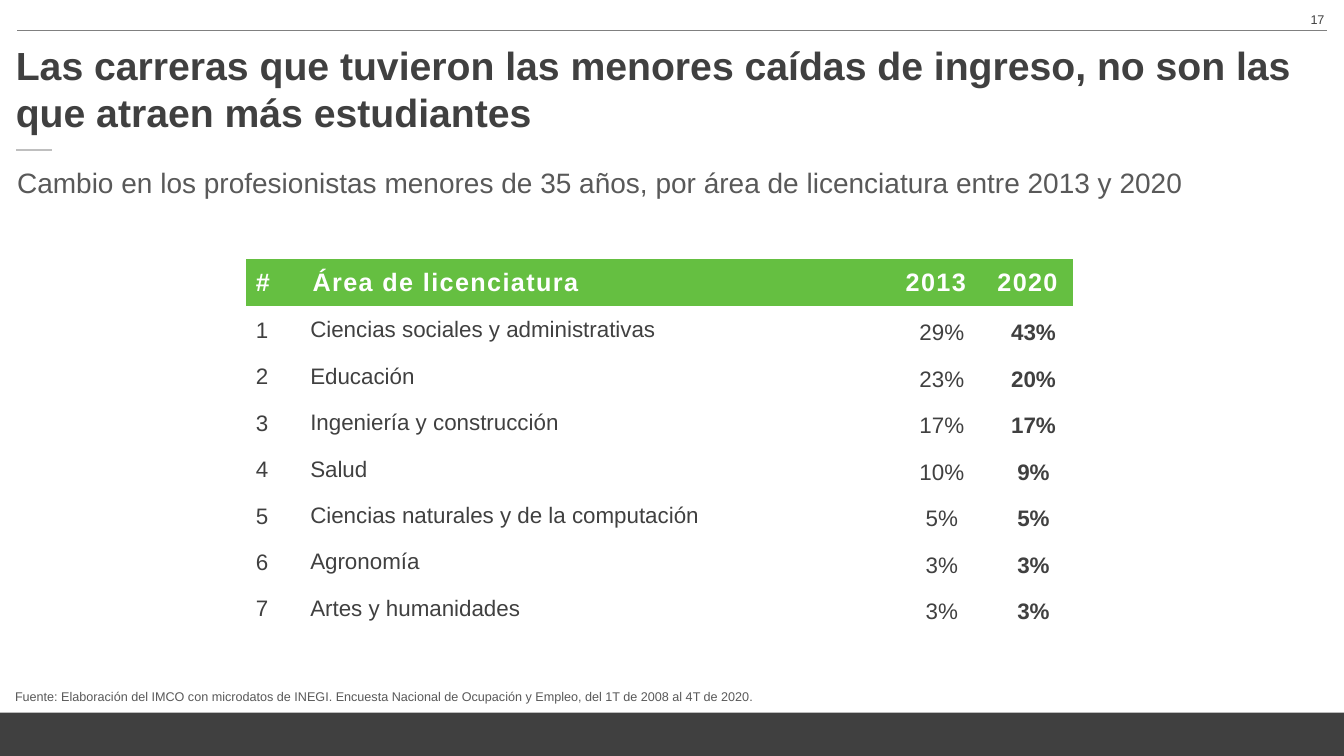
from lxml import etree
from pptx import Presentation
from pptx import util as u
from pptx.dml import color
from pptx.enum import shapes, text
from pptx.oxml import ns

COLORS = {"dark": "404040", "grey": "595959", "rule": "808080",
          "accent": "BFBFBF", "green": "65BF41", "white": "FFFFFF"}
LEFT, CENTER, RIGHT = text.PP_ALIGN.LEFT, text.PP_ALIGN.CENTER, text.PP_ALIGN.RIGHT
TOP, MIDDLE, BOTTOM = text.MSO_ANCHOR.TOP, text.MSO_ANCHOR.MIDDLE, text.MSO_ANCHOR.BOTTOM
PLAIN_STYLE = "{2D5ABB26-0587-4C30-8999-92F81FD0307C}"


def rgb(name):
    return color.RGBColor.from_string(COLORS[name])


def assign(target, values):
    for key, value in values.items():
        setattr(target, key, value)


class Deck:
    font_name = "Arial"

    def __init__(self, width, height):
        self.prs = Presentation()
        assign(self.prs, {"slide_width": u.Cm(width), "slide_height": u.Cm(height)})
        self.slide = self.prs.slides.add_slide(self.prs.slide_layouts[6])

    def fill_paragraph(self, paragraph, content, size, tone, bold=False, align=LEFT,
                       indent=0, hanging=0, leading=None, tracking=0):
        run = paragraph.add_run()
        run.text = content
        assign(run.font, {"name": self.font_name, "size": u.Pt(size), "bold": bold})
        run.font.color.rgb = rgb(tone)
        if tracking:
            run.font._element.set("spc", str(tracking * 100))
        assign(paragraph, {"alignment": align, "line_spacing": leading})
        properties = paragraph._p.get_or_add_pPr()
        properties.set("marL", str(u.Cm(indent)))
        properties.set("indent", str(-u.Cm(hanging)))

    def label(self, box, content, size, tone, anchor=TOP, **style):
        frame = self.slide.shapes.add_textbox(*map(u.Cm, box)).text_frame
        assign(frame, {"word_wrap": True, "vertical_anchor": anchor,
                       "auto_size": text.MSO_AUTO_SIZE.NONE})
        self.fill_paragraph(frame.paragraphs[0], content, size, tone, **style)

    def band(self, box, tone):
        band = self.slide.shapes.add_shape(shapes.MSO_SHAPE.RECTANGLE, *map(u.Cm, box))
        band.shadow.inherit = False
        band.fill.solid()
        band.fill.fore_color.rgb = rgb(tone)
        band.line.fill.background()

    def rule(self, left, right, y, tone, weight):
        rule = self.slide.shapes.add_connector(
            shapes.MSO_CONNECTOR.STRAIGHT, *map(u.Cm, (left, y, right, y)))
        rule.line.color.rgb = rgb(tone)
        rule.line.width = u.Pt(weight)
        etree.SubElement(rule._element.spPr, ns.qn("a:effectLst"))

    def cell(self, cell, content, margins, fill=None, **style):
        sides = ("margin_left", "margin_top", "margin_right", "margin_bottom")
        assign(cell, dict(zip(sides, map(u.Cm, margins)), vertical_anchor=MIDDLE))
        if fill:
            cell.fill.solid()
            cell.fill.fore_color.rgb = rgb(fill)
        else:
            cell.fill.background()
        self.fill_paragraph(cell.text_frame.paragraphs[0], content, **style)

    def table(self, left, top, widths, heights, rows, header_formats, body_formats):
        frame = self.slide.shapes.add_table(
            len(rows), len(widths),
            *map(u.Cm, (left, top, sum(widths), sum(heights))))
        grid = frame.table
        assign(grid, {"first_row": False, "horz_banding": False})
        grid._tbl.tblPr.find(ns.qn("a:tableStyleId")).text = PLAIN_STYLE
        for column, width in zip(grid.columns, widths):
            column.width = u.Cm(width)
        for r, (row, height) in enumerate(zip(rows, heights)):
            grid.rows[r].height = u.Cm(height)
            formats = body_formats if r else header_formats
            for c, (content, style) in enumerate(zip(row, formats)):
                self.cell(grid.cell(r, c), content, **style)


def main():
    deck = Deck(33.87, 19.05)
    deck.band((0, 17.96, 33.87, 1.09), "dark")
    deck.rule(0.43, 33.43, 0.77, "rule", 0.75)
    deck.label((26.01, 0.18, 7.62, 1.02), "17", 9, "dark", align=RIGHT)
    deck.label((0.15, 0.91, 33.48, 1.52),
               "Las carreras que tuvieron las menores caídas de ingreso, "
               "no son las que atraen más estudiantes", 28, "dark", bold=True)
    deck.label((0.13, 17.17, 32.99, 0.69),
               "Fuente: Elaboración del IMCO con microdatos de INEGI. Encuesta Nacional "
               "de Ocupación y Empleo, del 1T de 2008 al 4T de 2020.",
               9, "grey", anchor=BOTTOM, indent=0.03, hanging=0.03)
    deck.label((0.18, 4.04, 31.39, 1.96),
               "Cambio en los profesionistas menores de 35 años, "
               "por área de licenciatura entre 2013 y 2020", 20, "grey")
    deck.rule(0.41, 1.3, 3.78, "accent", 1.5)

    areas = [
        ("Ciencias sociales y administrativas", 29, 43),
        ("Educación", 23, 20),
        ("Ingeniería y construcción", 17, 17),
        ("Salud", 10, 9),
        ("Ciencias naturales y de la computación", 5, 5),
        ("Agronomía", 3, 3),
        ("Artes y humanidades", 3, 3),
    ]
    rows = [("#", "Área de licenciatura", "2013", "2020")]
    rows += [(str(rank), area, f"{before}%", f"{after}%")
             for rank, (area, before, after) in enumerate(areas, 1)]

    padded = (0.25, 0.13, 0.25, 0.13)
    heading = dict(size=18, tone="white", bold=True, tracking=1,
                   fill="green", margins=padded)
    year = dict(heading, align=CENTER)
    body = dict(size=16, tone="dark")
    rank_format = dict(body, margins=padded, leading=u.Pt(19.2))
    area_format = dict(body, margins=(0.02, 0.02, 0.02, 0), indent=0.2)
    share = dict(body, margins=(0.02, 0.13, 0.02, 0), indent=0.3,
                 align=CENTER, leading=u.Pt(19.2))
    deck.table(6.2, 6.53, (1.4, 14.83, 2.31, 2.31),
               [1.19] + [1.17] * len(areas), rows,
               (heading, dict(heading, indent=0.03), year, year),
               (rank_format, area_format, share, dict(share, bold=True)))
    deck.prs.save("out.pptx")


if __name__ == "__main__":
    main()
